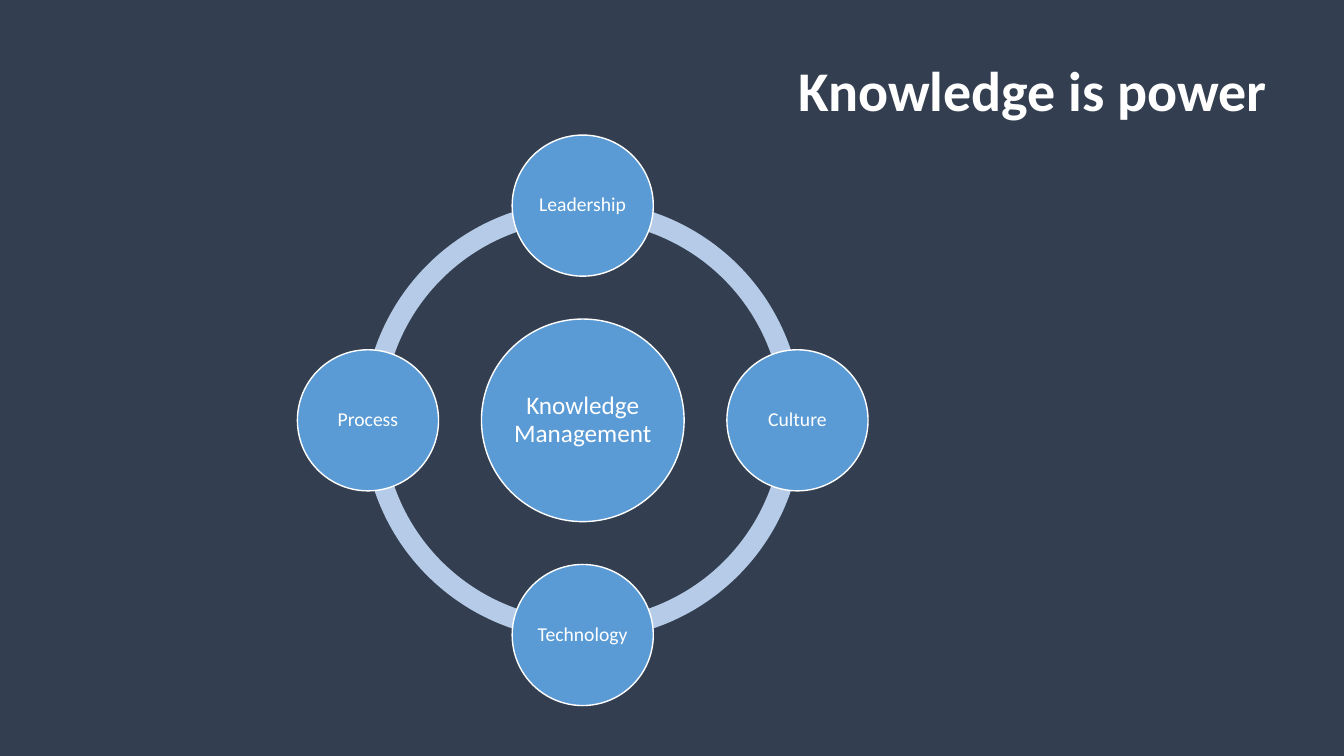
from math import cos, radians, sin

from pptx import Presentation
from pptx.dml.color import RGBColor
from pptx.enum.shapes import MSO_SHAPE
from pptx.enum.text import MSO_ANCHOR, PP_ALIGN
from pptx.util import Inches, Pt

BACKGROUND = RGBColor(0x33, 0x3F, 0x50)
RING = RGBColor(0xB5, 0xCB, 0xE7)
CIRCLE = RGBColor(0x5B, 0x9B, 0xD5)
WHITE = RGBColor(0xFF, 0xFF, 0xFF)

CENTER_X, CENTER_Y = 5.78, 4.17
ORBIT_RADIUS = 2.13
RING_DIAMETER = 4.36
RING_THICKNESS = 0.046
HUB_DIAMETER = 2.01
NODE_DIAMETER = 1.4
ANGLE_UNIT = 0.6
NODES = ["Culture", "Technology", "Process", "Leadership"]


def write_text(shape, text, size, bold=False, align=PP_ALIGN.CENTER, inset=0.02):
    frame = shape.text_frame
    frame.word_wrap = True
    frame.vertical_anchor = MSO_ANCHOR.MIDDLE
    frame.margin_left = frame.margin_right = Inches(inset)
    frame.margin_top = frame.margin_bottom = Inches(inset)
    paragraph = frame.paragraphs[0]
    paragraph.alignment = align
    paragraph.line_spacing = 0.9
    run = paragraph.add_run()
    run.text = text
    run.font.name = "Calibri"
    run.font.size = Pt(size)
    run.font.bold = bold
    run.font.color.rgb = WHITE


def add_round_shape(slide, kind, center_x, center_y, diameter, color):
    shape = slide.shapes.add_shape(
        kind,
        Inches(center_x - diameter / 2),
        Inches(center_y - diameter / 2),
        Inches(diameter),
        Inches(diameter),
    )
    shape.shadow.inherit = False
    shape.fill.solid()
    shape.fill.fore_color.rgb = color
    return shape


def add_ring_arc(slide, start, end):
    arc = add_round_shape(
        slide, MSO_SHAPE.BLOCK_ARC, CENTER_X, CENTER_Y, RING_DIAMETER, RING
    )
    arc.line.fill.background()
    arc.adjustments[0] = start * ANGLE_UNIT
    arc.adjustments[1] = end * ANGLE_UNIT
    arc.adjustments[2] = RING_THICKNESS


def add_circle(slide, text, center_x, center_y, diameter, size):
    circle = add_round_shape(
        slide, MSO_SHAPE.OVAL, center_x, center_y, diameter, CIRCLE
    )
    circle.line.color.rgb = WHITE
    circle.line.width = Pt(1)
    write_text(circle, text, size)


def add_title(slide, text):
    title = slide.shapes.add_textbox(
        Inches(3.44), Inches(0.3), Inches(9.22), Inches(1.25)
    )
    write_text(title, text, 40, bold=True, align=PP_ALIGN.RIGHT, inset=0.1)


def main():
    presentation = Presentation()
    presentation.slide_width = Inches(13.33)
    presentation.slide_height = Inches(7.5)
    slide = presentation.slides.add_slide(presentation.slide_layouts[6])
    slide.background.fill.solid()
    slide.background.fill.fore_color.rgb = BACKGROUND

    add_title(slide, "Knowledge is power")
    step = 360 // len(NODES)
    for start in range(0, 360, step):
        add_ring_arc(slide, start, (start + step) % 360)
    add_circle(slide, "Knowledge Management", CENTER_X, CENTER_Y, HUB_DIAMETER, 18)
    for index, name in enumerate(NODES):
        angle = radians(index * step)
        node_x = CENTER_X + ORBIT_RADIUS * cos(angle)
        node_y = CENTER_Y + ORBIT_RADIUS * sin(angle)
        add_circle(slide, name, node_x, node_y, NODE_DIAMETER, 14)

    presentation.save("out.pptx")


if __name__ == "__main__":
    main()
